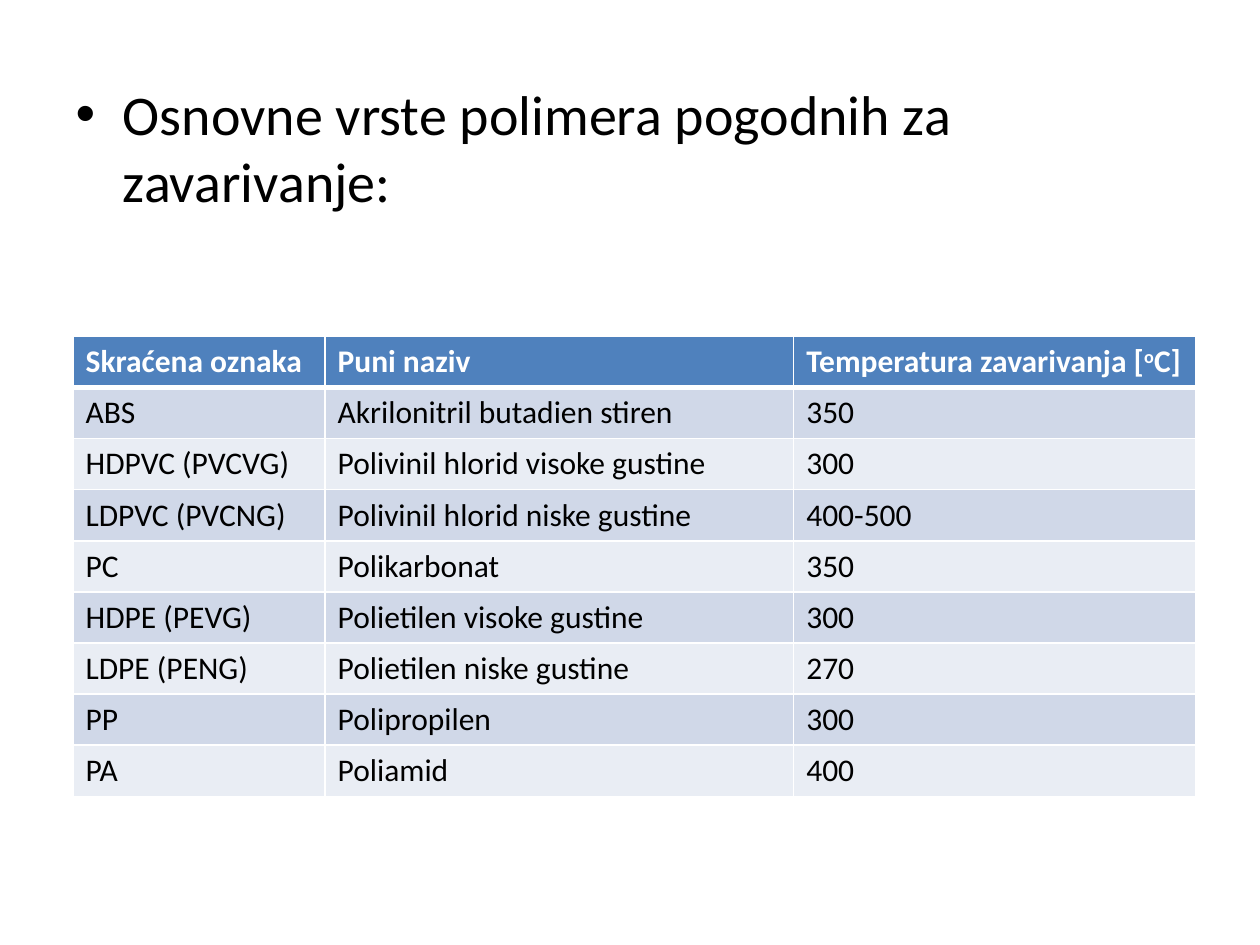
import pptx
import pptx.util
import pptx.dml.color
import pptx.oxml.ns
import lxml.etree

Inches = pptx.util.Inches
Pt = pptx.util.Pt

FONT = "Calibri"
WHITE, BLACK, BLUE = "FFFFFF", "000000", "4F81BD"
BANDS = ("D0D8E8", "E9EDF4")
WIDTHS = (2, 3.72, 3.19)
HEIGHT = 3.65

# Each cell is a string, or a list of (text, raised) runs
ROWS = [
    ("Skraćena oznaka", "Puni naziv",
     [("Temperatura zavarivanja [", False), ("o", True), ("C]", False)]),
    ("ABS", "Akrilonitril butadien stiren", "350"),
    ("HDPVC (PVCVG)", "Polivinil hlorid visoke gustine", "300"),
    ("LDPVC (PVCNG)", "Polivinil hlorid niske gustine", "400-500"),
    ("PC", "Polikarbonat", "350"),
    ("HDPE (PEVG)", "Polietilen visoke gustine", "300"),
    ("LDPE (PENG)", "Polietilen niske gustine", "270"),
    ("PP", "Polipropilen", "300"),
    ("PA", "Poliamid", "400"),
]


def color(code):
    return pptx.dml.color.RGBColor.from_string(code)


def add_run(para, text, size, code, bold=False, raised=False):
    run = para.add_run()
    run.text = text
    font = run.font
    font.name, font.size, font.bold = FONT, Pt(size), bold
    font.color.rgb = color(code)
    if raised:
        run._r.get_or_add_rPr().set("baseline", "30000")


def add_edge(cell, side, width):
    qn = pptx.oxml.ns.qn
    props = cell._tc.get_or_add_tcPr()
    line = lxml.etree.SubElement(props, qn("a:ln" + side), w=str(Pt(width)))
    fill = lxml.etree.SubElement(line, qn("a:solidFill"))
    lxml.etree.SubElement(fill, qn("a:srgbClr"), val=WHITE)


def fill_cell(cell, item, row):
    head = row == 0
    # Borders come before the fill in the cell properties
    edges = {"L": 1, "R": 1, "T": 3 if row == 1 else 1, "B": 3 if head else 1}
    for side, width in edges.items():
        add_edge(cell, side, width)
    cell.fill.solid()
    cell.fill.fore_color.rgb = color(BLUE if head else BANDS[(row - 1) % 2])
    runs = [(item, False)] if isinstance(item, str) else item
    for text, raised in runs:
        add_run(cell.text_frame.paragraphs[0], text, 18,
                WHITE if head else BLACK, head, raised)


def add_grid(slide):
    frame = slide.shapes.add_table(
        len(ROWS), len(WIDTHS), Inches(0.58), Inches(2.67),
        Inches(sum(WIDTHS)), Inches(HEIGHT))
    table = frame.table
    for col, width in zip(table.columns, WIDTHS):
        col.width = Inches(width)
    for row, items in enumerate(ROWS):
        for col, item in enumerate(items):
            fill_cell(table.cell(row, col), item, row)


def add_body(slide, text):
    # Bullet, indent and spacing come from the layout
    body = slide.placeholders[1]
    body.left, body.top = Inches(0.5), Inches(0.58)
    body.width, body.height = Inches(9), Inches(6.12)
    add_run(body.text_frame.paragraphs[0], text, 32, BLACK)


def main():
    deck = pptx.Presentation()
    deck.slide_width, deck.slide_height = Inches(10), Inches(7.5)
    slide = deck.slides.add_slide(deck.slide_layouts[1])

    # The slide has no title
    title = slide.shapes.title._element
    title.getparent().remove(title)

    add_body(slide, "Osnovne vrste polimera pogodnih za zavarivanje:")
    add_grid(slide)
    deck.save("out.pptx")


if __name__ == "__main__":
    main()
